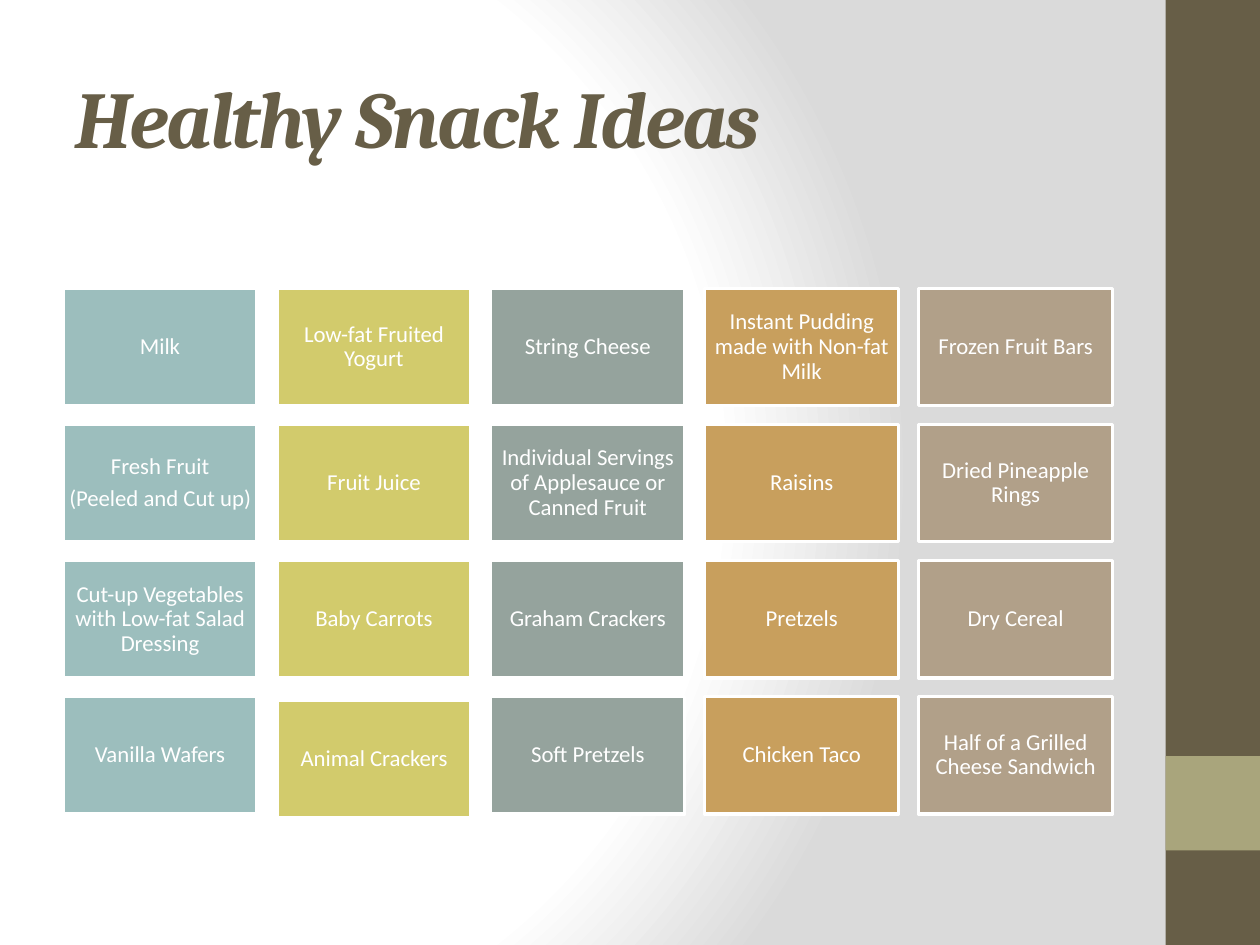
from dataclasses import dataclass

from lxml import etree
from pptx import Presentation
from pptx.dml.color import RGBColor
from pptx.enum.shapes import MSO_SHAPE
from pptx.enum.text import MSO_ANCHOR, MSO_AUTO_SIZE, PP_ALIGN
from pptx.oxml import parse_xml
from pptx.oxml.ns import nsdecls, qn
from pptx.util import Inches, Pt

RECT = MSO_SHAPE.RECTANGLE
MIDDLE = MSO_ANCHOR.MIDDLE
NO_FIT = MSO_AUTO_SIZE.NONE
LEFT, CENTER = PP_ALIGN.LEFT, PP_ALIGN.CENTER


@dataclass(frozen=True)
class Theme:
    brown: str = "675E47"
    olive: str = "A9A57C"
    white: str = "FFFFFF"
    gray: str = "DADADA"
    columns: tuple = ("9CBEBD", "D2CB6C", "95A39D", "C89F5D", "B1A089")
    title_font: str = "Cambria"
    body_font: str = "Calibri"
    title_size: float = 46
    body_size: float = 13


THEME = Theme()
WIDTH, HEIGHT = 10, 7.5
BAR_BOX = (0.925 * WIDTH, 0, 0.075 * WIDTH, HEIGHT)
TITLE_BOX = (0.5, 0.3, 8.33, 1.25)
GRID_BOX = (0.5, 2.29, 8.33, 4.17)
TILE_W, TILE_H = 1.54, 0.93
NUDGES = {"Animal Crackers": 0.03}

SNACKS = [
    ["Milk", "Low-fat Fruited Yogurt", "String Cheese",
     "Instant Pudding made with Non-fat Milk", "Frozen Fruit Bars"],
    ["Fresh Fruit\n(Peeled and Cut up)", "Fruit Juice",
     "Individual Servings of Applesauce or Canned Fruit", "Raisins",
     "Dried Pineapple Rings"],
    ["Cut-up Vegetables with Low-fat Salad Dressing", "Baby Carrots",
     "Graham Crackers", "Pretzels", "Dry Cereal"],
    ["Vanilla Wafers", "Animal Crackers", "Soft Pretzels", "Chicken Taco",
     "Half of a Grilled Cheese Sandwich"],
]


def write_text(tf, text, *, font, size, color, align, inset, bold=False,
               italic=False, line_spacing=1.0, after=0, tracking=0):
    tf.word_wrap = True
    tf.auto_size = NO_FIT
    tf.vertical_anchor = MIDDLE
    tf.margin_left = tf.margin_right = Inches(inset)
    tf.margin_top = tf.margin_bottom = Inches(0.05)
    for i, line in enumerate(text.split("\n")):
        p = tf.paragraphs[0] if i == 0 else tf.add_paragraph()
        p.alignment = align
        p.line_spacing = line_spacing
        p.space_after = Pt(after)
        r = p.add_run()
        r.text = line
        r.font.name = font
        r.font.size = Pt(size)
        r.font.bold = bold
        r.font.italic = italic
        r.font.color.rgb = RGBColor.from_string(color)
        if tracking:
            r.font._element.set("spc", str(tracking * 100))


def add_rect(s, box, fill, line=None):
    sp = s.shapes.add_shape(RECT, *map(Inches, box))
    sp.shadow.inherit = False
    sp.fill.solid()
    sp.fill.fore_color.rgb = RGBColor.from_string(fill)
    if line:
        sp.line.color.rgb = RGBColor.from_string(line)
        sp.line.width = Pt(2)
    else:
        sp.line.fill.background()
    return sp


def paint_background(s):
    s.background.fill.solid()
    bg_pr = s._element.cSld.find(qn("p:bg")).find(qn("p:bgPr"))
    bg_pr.remove(bg_pr[0])
    grad = parse_xml(f'<a:gradFill {nsdecls("a")} rotWithShape="1"/>')
    stops = etree.SubElement(grad, qn("a:gsLst"))
    for pos, color in ((0, THEME.white), (75, THEME.white), (100, THEME.gray)):
        stop = etree.SubElement(stops, qn("a:gs"), pos=str(pos * 1000))
        etree.SubElement(stop, qn("a:srgbClr"), val=color)
    circle = etree.SubElement(grad, qn("a:path"))
    circle.set("path", "circle")
    etree.SubElement(circle, qn("a:fillToRect"),
                     l="20000", t="50000", r="100000", b="50000")
    bg_pr.insert(0, grad)


def place_side_bar(s, box):
    left, top, width, height = box
    add_rect(s, box, THEME.brown)
    add_rect(s, (left, top + 0.8 * height, width, 0.1 * height), THEME.olive)


def place_title(s, box, text):
    sp = s.shapes.title
    sp.left, sp.top, sp.width, sp.height = map(Inches, box)
    write_text(sp.text_frame, text, font=THEME.title_font,
               size=THEME.title_size, color=THEME.brown, align=LEFT,
               inset=0.1, bold=True, italic=True, tracking=-1)


def place_tiles(s, box, rows):
    left, top, width, height = box
    step_x = (width - TILE_W) / (len(rows[0]) - 1)
    step_y = (height - TILE_H) / (len(rows) - 1)
    for i, row in enumerate(rows):
        for j, (text, fill) in enumerate(zip(row, THEME.columns)):
            y = top + i * step_y + NUDGES.get(text, 0)
            sp = add_rect(s, (left + j * step_x, y, TILE_W, TILE_H), fill,
                          line=THEME.white)
            write_text(sp.text_frame, text, font=THEME.body_font,
                       size=THEME.body_size, color=THEME.white, align=CENTER,
                       inset=0.05, line_spacing=0.9,
                       after=0.35 * THEME.body_size)


def main():
    prs = Presentation()
    prs.slide_width, prs.slide_height = Inches(WIDTH), Inches(HEIGHT)
    s = prs.slides.add_slide(prs.slide_layouts[5])
    paint_background(s)
    place_side_bar(s, BAR_BOX)
    place_title(s, TITLE_BOX, "Healthy Snack Ideas")
    place_tiles(s, GRID_BOX, SNACKS)
    prs.save("out.pptx")


if __name__ == "__main__":
    main()
